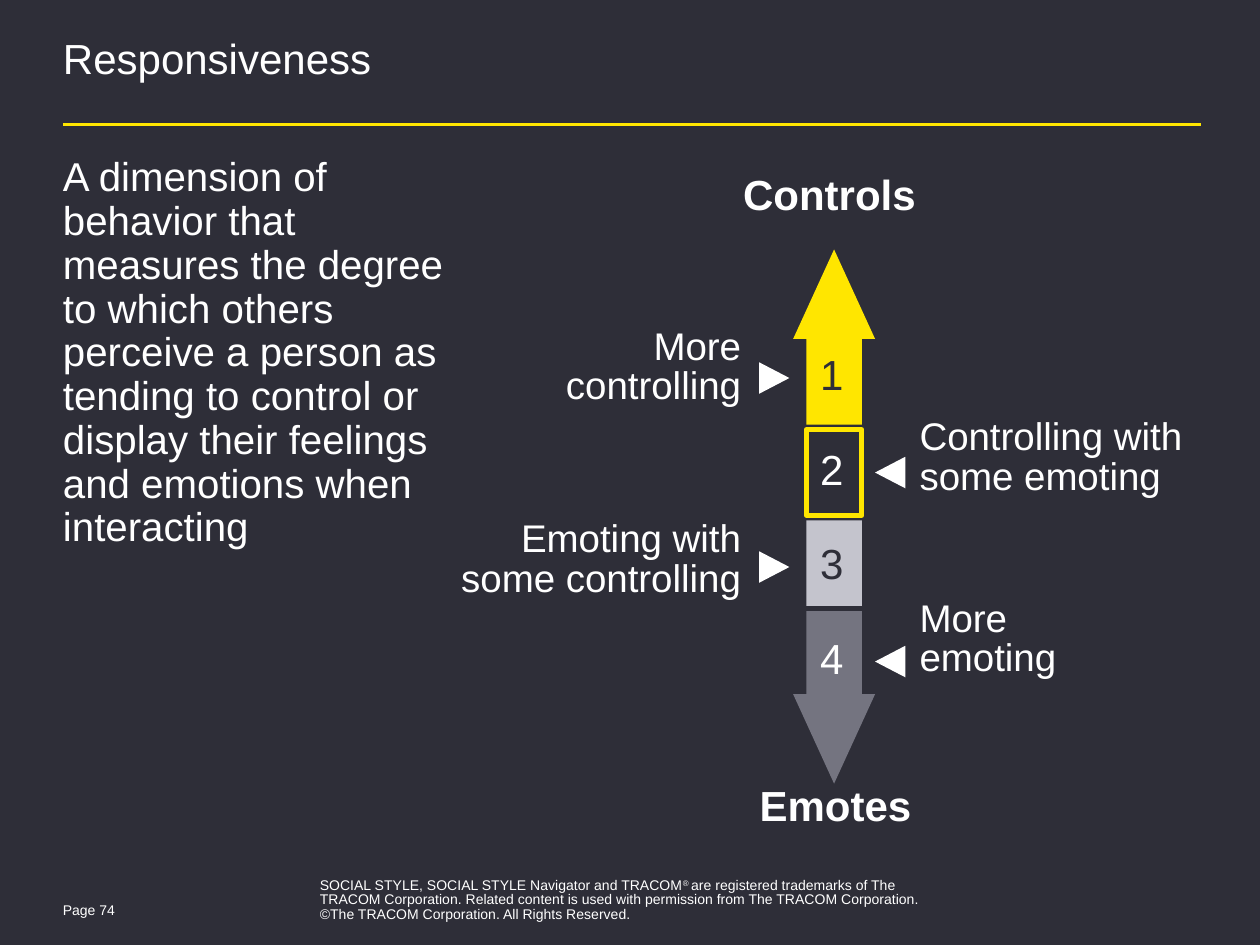
from dataclasses import dataclass

from pptx import Presentation
from pptx import util as u
from pptx.dml.color import RGBColor
from pptx.enum import shapes, text
from pptx.oxml.ns import qn


@dataclass(frozen=True)
class Theme:
    font: str = "Arial"
    dark: str = "2E2E38"
    white: str = "FFFFFF"
    yellow: str = "FFE600"
    light_gray: str = "C4C4CD"
    gray: str = "747480"
    heading: int = 24
    body: int = 23
    label: int = 22
    small: int = 8
    tight: float = 0.85


THEME = Theme()
WIDTH, HEIGHT = u.Inches(10), u.Inches(7.5)
COLUMNS, ROWS = 10, 7.5  # square grid cells
MARGIN = 0.5
AXIS = 6.62  # centre column of the scale
BLOCK_WIDTH, BLOCK_HEIGHT = 0.44, 0.68
FIRST_BLOCK, BLOCK_STEP = 3.03, 0.72  # block centres
FIRST_NUMBER, NUMBER_STEP = 2.72, 0.75  # tops of the number boxes


def col(count):
    return round(WIDTH * count / COLUMNS)


def row(count):
    return round(HEIGHT * count / ROWS)


def place(left, top, width, height):
    return col(left), row(top), col(width), row(height)


def color(value):
    return RGBColor.from_string(value)


def paint(shape, fill, outline=None, weight=3):
    shape.shadow.inherit = False
    shape.fill.solid()
    shape.fill.fore_color.rgb = color(fill)
    if outline:
        shape.line.color.rgb = color(outline)
        shape.line.width = u.Pt(weight)
    else:
        shape.line.fill.background()


def add_text(slide, box, content, size, ink=THEME.white, bold=False,
             align=text.PP_ALIGN.LEFT, spacing=None, inset=True):
    frame = slide.shapes.add_textbox(*place(*box)).text_frame
    frame.word_wrap = True
    if not inset:
        frame.margin_left = frame.margin_right = 0
        frame.margin_top = frame.margin_bottom = 0
    paragraph = frame.paragraphs[0]
    paragraph.text = content
    paragraph.alignment = align
    if spacing:
        paragraph.line_spacing = spacing
    font = paragraph.font
    font.name, font.size, font.bold = THEME.font, u.Pt(size), bold
    font.color.rgb = color(ink)
    return paragraph


def add_rule(slide, left, right, top):
    rule = slide.shapes.add_connector(
        shapes.MSO_CONNECTOR.STRAIGHT, col(left), row(top), col(right), row(top))
    rule.line.color.rgb = color(THEME.yellow)
    rule.line.width = u.Pt(1.5)
    properties = rule._element.spPr
    properties.append(properties.makeelement(qn("a:effectLst"), {}))


def add_block(slide, index, fill, outline=None):
    center = FIRST_BLOCK + index * BLOCK_STEP
    block = slide.shapes.add_shape(
        shapes.MSO_SHAPE.RECTANGLE,
        *place(AXIS - BLOCK_WIDTH / 2, center - BLOCK_HEIGHT / 2,
               BLOCK_WIDTH, BLOCK_HEIGHT))
    paint(block, fill, outline)


def add_arrow_tip(slide, tip, base, fill):
    half = 0.325
    builder = slide.shapes.build_freeform(col(AXIS), row(tip))
    builder.add_line_segments(
        [(col(AXIS + half), row(base)), (col(AXIS - half), row(base))], close=True)
    paint(builder.convert_to_shape(), fill)


def add_pointer(slide, left, top, rotation):
    pointer = slide.shapes.add_shape(
        shapes.MSO_SHAPE.ISOSCELES_TRIANGLE, *place(left, top, 0.25, 0.24))
    pointer.rotation = rotation
    paint(pointer, THEME.white)


def add_scale(slide):
    # Blocks and their numbers, from controlling to emoting
    blocks = [
        (THEME.yellow, None, THEME.dark),
        (THEME.dark, THEME.yellow, THEME.white),
        (THEME.light_gray, None, THEME.dark),
        (THEME.gray, None, THEME.white),
    ]
    for index, (fill, outline, ink) in enumerate(blocks):
        add_block(slide, index, fill, outline)
        top = FIRST_NUMBER + index * NUMBER_STEP
        add_text(slide, (6.41, top, 0.41, 0.5), str(index + 1), THEME.heading, ink)

    # Arrow tips and the names of both ends
    add_arrow_tip(slide, 1.98, 2.69, THEME.yellow)
    add_arrow_tip(slide, 6.22, 5.51, THEME.gray)
    add_text(slide, (5.8, 1.29, 1.66, 0.5), "Controls", THEME.heading, bold=True)
    add_text(slide, (5.93, 6.14, 1.45, 0.5), "Emotes", THEME.heading, bold=True)

    # Labels alternate between the left and right side, each with a pointer
    labels = [
        ("More\vcontrolling", 4.3, 2.56, 1.68),
        ("Controlling with\vsome emoting", 7.2, 3.28, 2.4),
        ("Emoting with some controlling", 3.22, 4.09, 2.76),
        ("More\vemoting", 7.2, 4.72, 1.34),
    ]
    for index, (label, left, top, width) in enumerate(labels):
        on_left = index % 2 == 0
        align = text.PP_ALIGN.RIGHT if on_left else text.PP_ALIGN.LEFT
        add_text(slide, (left, top, width, 0.73), label, THEME.label,
                 align=align, spacing=THEME.tight)
        add_pointer(slide, 6.02 if on_left else 6.94,
                    2.88 + index * NUMBER_STEP, 90 if on_left else 270)


def add_footer(slide):
    add_text(slide, (0.4, 7.11, 0.73, 0.2), "Page 74", THEME.small)
    notice = add_text(slide, (2.44, 6.93, 5.13, 0.44),
                      "SOCIAL STYLE, SOCIAL STYLE Navigator and TRACOM",
                      THEME.small, spacing=THEME.tight)
    mark = notice.add_run()
    mark.text = "® "
    mark.font._element.set("baseline", "30000")
    notice.add_run().text = (
        "are registered trademarks of The TRACOM Corporation. Related content "
        "is used with permission from The TRACOM Corporation. ")
    notice.add_line_break()
    notice.add_run().text = "©The TRACOM Corporation. All Rights Reserved."


def main():
    presentation = Presentation()
    presentation.slide_width, presentation.slide_height = WIDTH, HEIGHT
    slide = presentation.slides.add_slide(presentation.slide_layouts[6])
    slide.background.fill.solid()
    slide.background.fill.fore_color.rgb = color(THEME.dark)

    # Title and definition
    add_text(slide, (MARGIN, 0.32, 9, 0.65), "Responsiveness", THEME.heading,
             spacing=THEME.tight, inset=False)
    add_rule(slide, MARGIN, 9.53, 0.99)
    add_text(slide, (MARGIN, 1.24, 3.1, 5.41),
             "A dimension of behavior that measures the degree to which others "
             "perceive a person as tending to control or display their feelings "
             "and emotions when interacting",
             THEME.body, spacing=u.Pt(25), inset=False)

    add_scale(slide)
    add_footer(slide)
    presentation.save("out.pptx")


if __name__ == "__main__":
    main()
